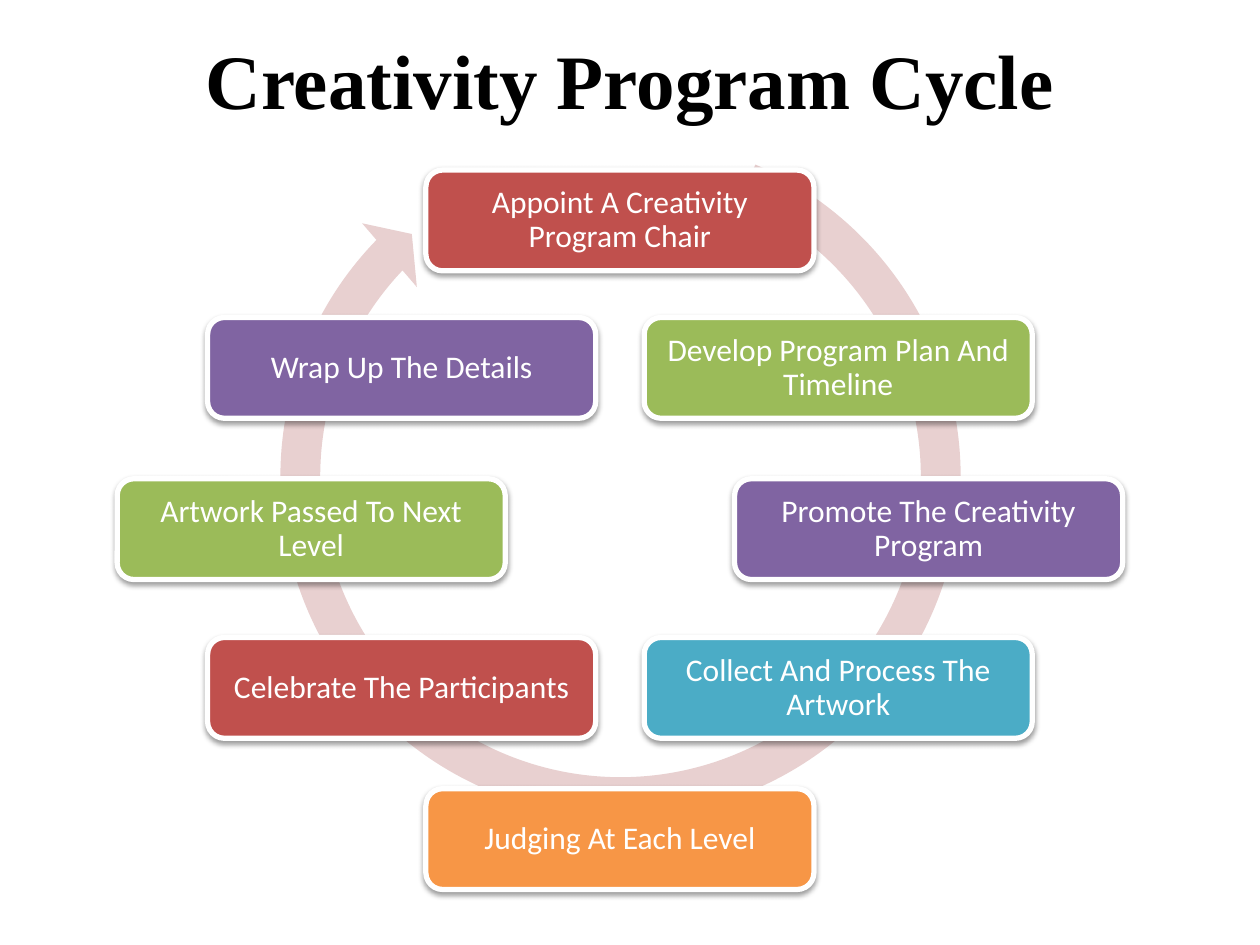
from dataclasses import dataclass
from math import pi, sin

from lxml.etree import SubElement
from pptx import Presentation
from pptx.dml.color import RGBColor
from pptx.enum.shapes import MSO_SHAPE
from pptx.enum.text import MSO_ANCHOR, PP_ALIGN
from pptx.oxml.ns import qn
from pptx.util import Inches, Pt


@dataclass(frozen=True)
class Theme:
    """Colours, fonts and type sizes of the slide."""
    title_font: str = "Times New Roman"
    body_font: str = "Calibri"
    title_size: int = 44
    body_size: int = 18
    black: str = "000000"
    white: str = "FFFFFF"
    ring: str = "E8D0D0"
    red: str = "C0504D"
    green: str = "9BBB59"
    purple: str = "8064A2"
    teal: str = "4BACC6"
    orange: str = "F79646"


THEME = Theme()
CENTRE_X, RADIUS = 4.92, 2.45
STEP_WIDTH, STEP_HEIGHT = 3.08, 0.8
ROW_TOPS = (1.35, 2.52, 3.8, 5.06, 6.26)
RING_ADJUSTMENTS = (0.055, 3.307, 134.29, 176.009, 0.058)
STEPS = (
    ("Appoint A Creativity Program Chair", THEME.red),
    ("Develop Program Plan And Timeline", THEME.green),
    ("Promote The Creativity Program", THEME.purple),
    ("Collect And Process The Artwork", THEME.teal),
    ("Judging At Each Level", THEME.orange),
    ("Celebrate The Participants", THEME.red),
    ("Artwork Passed To Next Level", THEME.green),
    ("Wrap Up The Details", THEME.purple),
)


def format_text(text_frame, font_name, size, colour, bold=False):
    """Centre the text of a frame and set its font."""
    text_frame.word_wrap = True
    text_frame.vertical_anchor = MSO_ANCHOR.MIDDLE
    for paragraph in text_frame.paragraphs:
        paragraph.alignment = PP_ALIGN.CENTER
        for run in paragraph.runs:
            run.font.name = font_name
            run.font.size = Pt(size)
            run.font.bold = bold
            run.font.color.rgb = RGBColor.from_string(colour)


def add_title(slide, text):
    """Place and format the title placeholder."""
    title = slide.shapes.title
    title.left, title.top = Inches(0), Inches(0)
    title.width, title.height = Inches(10), Inches(1.25)
    title.text_frame.text = text
    format_text(title.text_frame, THEME.title_font, THEME.title_size, THEME.black, bold=True)


def add_filled_shape(slide, kind, left, top, width, height, colour):
    """Add a flat preset shape without an outline."""
    shape = slide.shapes.add_shape(kind, Inches(left), Inches(top), Inches(width), Inches(height))
    shape.fill.solid()
    shape.fill.fore_color.rgb = RGBColor.from_string(colour)
    shape.line.fill.background()
    shape.shadow.inherit = False
    return shape


def add_ring(slide):
    """Add the circular arrow behind the steps."""
    ring = add_filled_shape(slide, MSO_SHAPE.CIRCULAR_ARROW, 2.05, 0.91, 5.75, 5.75, THEME.ring)
    for index, value in enumerate(RING_ADJUSTMENTS):
        ring.adjustments[index] = value


def add_shadow(shape):
    """Give a shape a soft shadow that falls straight down."""
    effects = shape._element.spPr.find(qn("a:effectLst"))
    shadow = SubElement(effects, qn("a:outerShdw"), blurRad=str(Pt(3.1)), dist=str(Pt(1.6)),
                        dir="5400000", rotWithShape="0")
    colour = SubElement(shadow, qn("a:srgbClr"), val=THEME.black)
    SubElement(colour, qn("a:alpha"), val="38000")


def add_step(slide, index, text, colour):
    """Add one step of the cycle, counted clockwise from the top."""
    left = CENTRE_X + RADIUS * sin(index * 2 * pi / len(STEPS)) - STEP_WIDTH / 2
    top = ROW_TOPS[min(index, len(STEPS) - index)]
    step = add_filled_shape(slide, MSO_SHAPE.ROUNDED_RECTANGLE, left, top,
                            STEP_WIDTH, STEP_HEIGHT, colour)
    step.line.color.rgb = RGBColor.from_string(THEME.white)
    step.line.width = Pt(3)
    add_shadow(step)
    frame = step.text_frame
    frame.margin_left = frame.margin_right = Inches(0.07)
    frame.margin_top = frame.margin_bottom = Inches(0.07)
    frame.text = text
    frame.paragraphs[0].line_spacing = 0.9
    format_text(frame, THEME.body_font, THEME.body_size, THEME.white)


def main():
    """Build and save the slide."""
    presentation = Presentation()
    presentation.slide_width, presentation.slide_height = Inches(10), Inches(7.5)
    slide = presentation.slides.add_slide(presentation.slide_layouts[5])
    add_title(slide, "Creativity Program Cycle")
    add_ring(slide)
    for index, (text, colour) in enumerate(STEPS):
        add_step(slide, index, text, colour)
    presentation.save("out.pptx")


if __name__ == "__main__":
    main()
